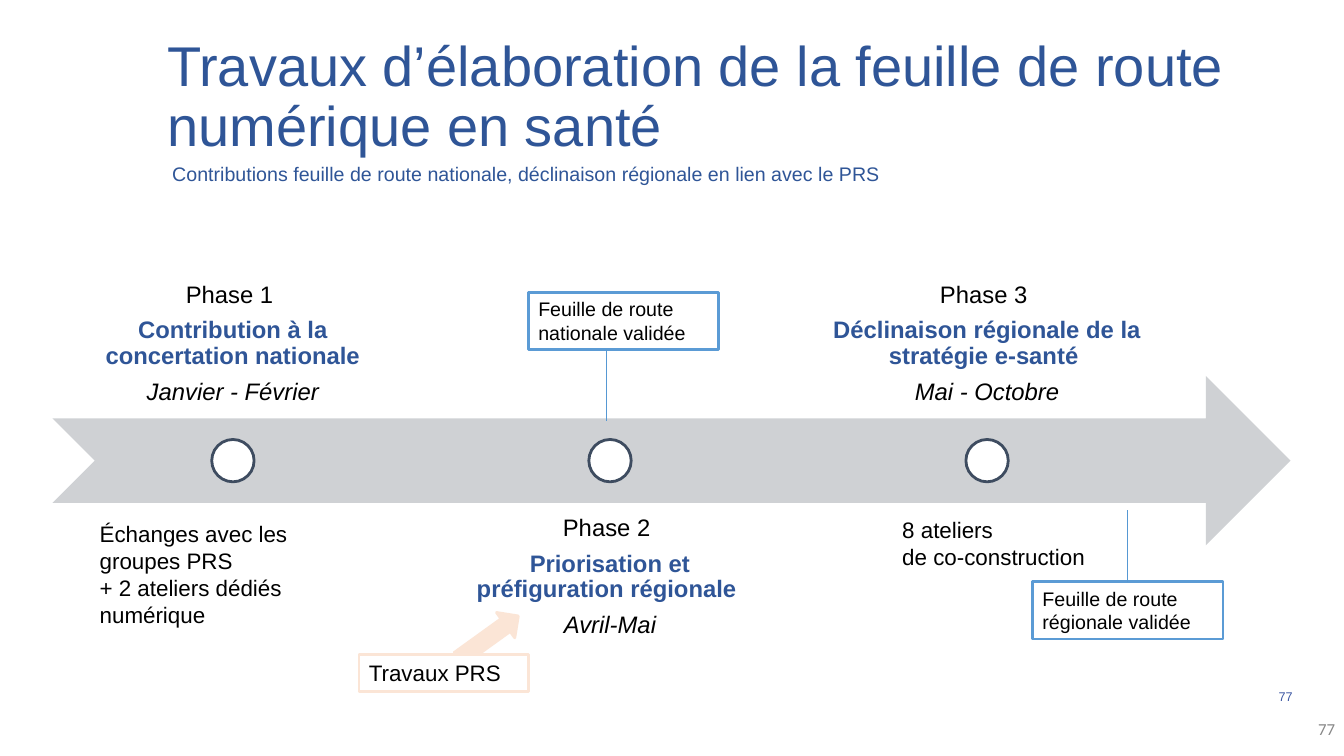
import pptx
import pptx.util
import pptx.dml.color
import pptx.enum.shapes
import pptx.enum.text
import pptx.oxml.ns
import lxml.etree

Inches = pptx.util.Inches
Pt = pptx.util.Pt
RGBColor = pptx.dml.color.RGBColor
SHAPE = pptx.enum.shapes.MSO_SHAPE
ALIGN = pptx.enum.text.PP_ALIGN
ANCHOR = pptx.enum.text.MSO_ANCHOR

NAVY = RGBColor(0x2F, 0x55, 0x97)
PAGE_BLUE = RGBColor(0x3C, 0x57, 0xA3)
GREY = RGBColor(0x88, 0x88, 0x88)
BLACK = RGBColor(0, 0, 0)
WHITE = RGBColor(0xFF, 0xFF, 0xFF)
BAND = RGBColor(0xCF, 0xD1, 0xD4)
RING = RGBColor(0x3E, 0x4C, 0x60)
PEACH = RGBColor(0xFB, 0xE5, 0xD6)
SKY = RGBColor(0x5B, 0x9B, 0xD5)
LINK = RGBColor(0x56, 0x98, 0xD3)

TITLE = "Travaux d’élaboration de la feuille de route numérique en santé"
SUBTITLE = "Contributions feuille de route nationale, déclinaison régionale en lien avec le PRS"
PAGE = "77"
PHASES = [
    ("Phase 1 ", "Contribution à la concertation nationale", "Janvier - Février"),
    ("Phase 2 ", "Priorisation et préfiguration régionale ", "Avril-Mai"),
    ("Phase 3 ", "Déclinaison régionale de la stratégie e-santé ", "Mai - Octobre"),
]
PHASE_FORMATS = [
    {"size": Pt(17)},
    {"size": Pt(17), "bold": True, "color": NAVY},
    {"size": Pt(17), "italic": True},
]
NOTES = [
    ((0.89, 5.11, 2.52, 1.18), ["Échanges avec les groupes PRS", "+ 2 ateliers dédiés numérique"]),
    ((8.85, 5.07, 2.52, 0.64), ["8 ateliers", "de co-construction"]),
]
CALLOUTS = {
    "prs": ((3.56, 6.49, 1.68, 0.37), "Travaux PRS", 16, PEACH),
    "national": ((5.24, 2.9, 1.89, 0.57), "Feuille de route nationale validée", 14, SKY),
    "regional": ((10.24, 5.77, 1.89, 0.57), "Feuille de route régionale validée", 14, SKY),
}
BAND_PLACE = (0.52, 3.73, 12.28, 1.68)
FIRST_CENTRE, PHASE_STEP = 2.31, 3.74
MARKER = 0.42
PHASE_HEIGHT = 1.68
ABOVE = {"top": 2.47, "width": 3.56, "anchor": ANCHOR.BOTTOM}
BELOW = {"top": 4.99, "width": 3, "anchor": ANCHOR.TOP}

deck = pptx.Presentation()
deck.slide_width, deck.slide_height = Inches(13.33), Inches(7.5)
slide = deck.slides.add_slide(deck.slide_layouts[6])


def write(holder, lines, formats, anchor=ANCHOR.TOP, inset=None, **paragraph_format):
    frame = holder.text_frame
    frame.word_wrap = True
    frame.vertical_anchor = anchor
    if inset is not None:
        for side in ("left", "top", "right", "bottom"):
            setattr(frame, "margin_" + side, Inches(inset))
    for index, (line, look) in enumerate(zip(lines, formats)):
        paragraph = frame.paragraphs[0] if index == 0 else frame.add_paragraph()
        for key, value in {"alignment": ALIGN.LEFT, **paragraph_format}.items():
            setattr(paragraph, key, value)
        run = paragraph.add_run()
        run.text = line
        for key, value in {"name": "Arial", "color": BLACK, **look}.items():
            if key == "color":
                run.font.color.rgb = value
            else:
                setattr(run.font, key, value)


def add_text(place, lines, formats, **options):
    holder = slide.shapes.add_textbox(*map(Inches, place))
    write(holder, lines, formats, **options)


def add_figure(kind, place, fill, line=None):
    figure = slide.shapes.add_shape(kind, *map(Inches, place))
    figure.shadow.inherit = False
    figure.fill.solid()
    figure.fill.fore_color.rgb = fill
    if line is None:
        figure.line.fill.background()
    else:
        figure.line.color.rgb = line
        figure.line.width = Pt(2)
    return figure


def add_link(x, top, bottom):
    link = slide.shapes.add_connector(
        pptx.enum.shapes.MSO_CONNECTOR.STRAIGHT, *map(Inches, (x, top, x, bottom)))
    link.line.color.rgb = LINK
    link.line.width = Pt(0.75)
    lxml.etree.SubElement(link._element.spPr, pptx.oxml.ns.qn("a:effectLst"))
    return link


add_text((12.34, 6.71, 0.82, 0.4), [PAGE], [{"size": Pt(9), "color": PAGE_BLUE}],
         anchor=ANCHOR.MIDDLE, alignment=ALIGN.CENTER)
prs_arrow = add_figure(SHAPE.RIGHT_ARROW, (4.48, 6.17, 0.73, 0.31), PEACH, PEACH)
prs_arrow.rotation = 324.2
add_text((1.56, 0.25, 11.5, 1.45), [TITLE], [{"size": Pt(40), "color": NAVY}],
         anchor=ANCHOR.MIDDLE, line_spacing=0.9)
add_text((11.37, 6.97, 1.97, 0.53), [PAGE],
         [{"size": Pt(12), "name": "Calibri", "color": GREY}],
         anchor=ANCHOR.MIDDLE, alignment=ALIGN.RIGHT)

add_figure(SHAPE.NOTCHED_RIGHT_ARROW, BAND_PLACE, BAND)
band_middle = BAND_PLACE[1] + BAND_PLACE[3] / 2
for index, phase in enumerate(PHASES):
    centre = FIRST_CENTRE + index * PHASE_STEP
    side = BELOW if index % 2 else ABOVE
    add_text((centre - side["width"] / 2, side["top"], side["width"], PHASE_HEIGHT),
             phase, PHASE_FORMATS, anchor=side["anchor"], inset=0.13,
             alignment=ALIGN.CENTER, line_spacing=0.9, space_after=Pt(7))
    add_figure(SHAPE.OVAL, (centre - MARKER / 2, band_middle - MARKER / 2, MARKER, MARKER),
               WHITE, RING)

callout_boxes = {}
for key, (place, label, size, border) in CALLOUTS.items():
    callout_boxes[key] = add_figure(SHAPE.RECTANGLE, place, WHITE, border)
    write(callout_boxes[key], [label], [{"size": Pt(size)}])

add_link(6.02, 3.47, 4.18)
regional_link = add_link(11.18, 5.06, 5.77)
regional_link.end_connect(callout_boxes["regional"], 0)
regional_link.begin_x = regional_link.end_x

for place, lines in NOTES:
    add_text(place, lines, [{"size": Pt(16)}] * len(lines))
add_text((1.61, 1.56, 8.49, 0.4), [SUBTITLE], [{"size": Pt(14), "color": NAVY}])

deck.save("out.pptx")
